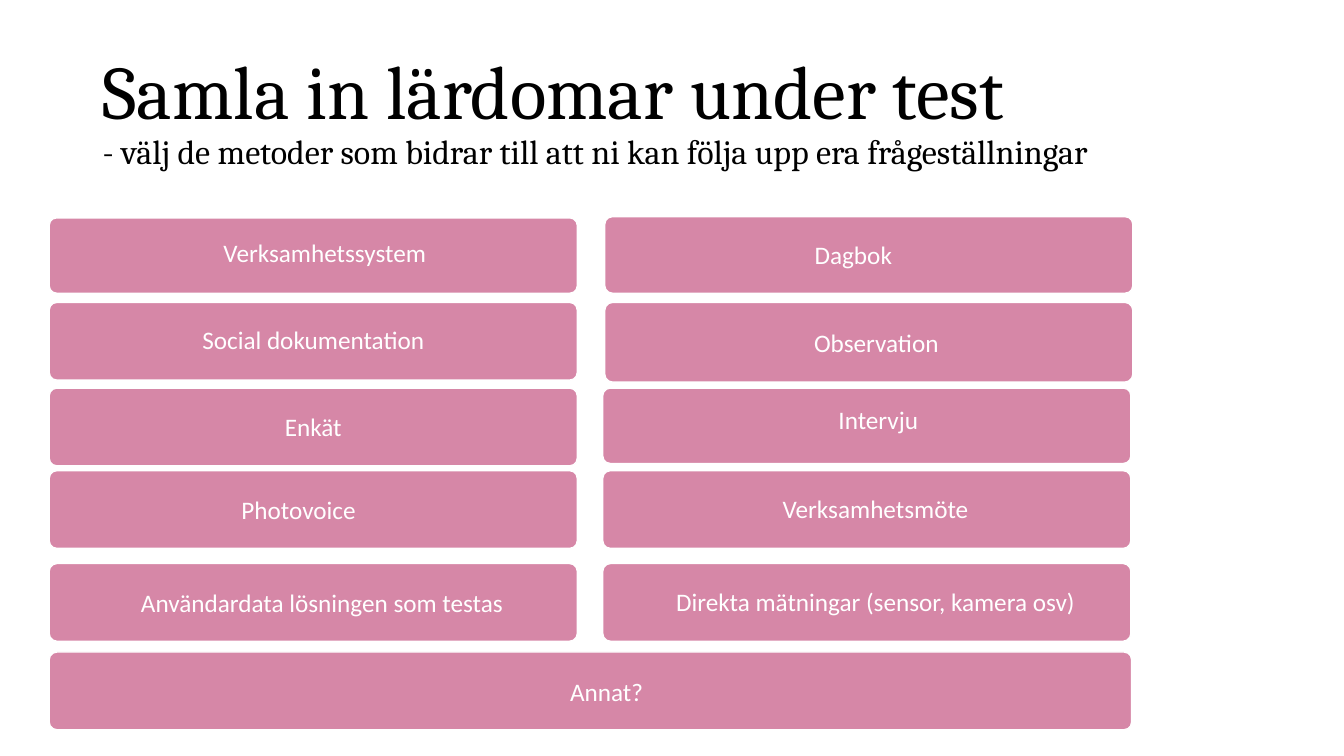
import pptx
import pptx.util
import pptx.dml.color
import pptx.enum.shapes
import pptx.enum.text

Cm, Pt = pptx.util.Cm, pptx.util.Pt
RGB = pptx.dml.color.RGBColor
ALIGN = pptx.enum.text.PP_ALIGN
MIDDLE = pptx.enum.text.MSO_ANCHOR.MIDDLE
ROUND = pptx.enum.shapes.MSO_SHAPE.ROUNDED_RECTANGLE

PINK = RGB(0xD6, 0x87, 0xA7)
WHITE = RGB(0xFF, 0xFF, 0xFF)
BLACK = RGB(0, 0, 0)

HEAD = "Samla in lärdomar under test"
LEAD = "- välj de metoder som bidrar till att ni kan följa upp era frågeställningar"

# Centimetres: text, left, top, height, label shift right, label shift down
LEFT, RIGHT, INNER = 1.24, 15.24, 15.19
CARDS = [
    ("Verksamhetssystem", LEFT, 5.49, 1.9, 0.29, -0.04),
    ("Dagbok", RIGHT, 5.46, 1.93, -0.39, 0.03),
    ("Social dokumentation", LEFT, 7.62, 1.96, 0, 0),
    ("Observation", RIGHT, 7.62, 2.01, 0.19, 0.05),
    ("Enkät", LEFT, 9.78, 1.96, 0, 0.03),
    ("Intervju", INNER, 9.78, 1.9, 0.29, -0.1),
    ("Photovoice", LEFT, 11.86, 1.96, -0.37, 0.05),
    ("Verksamhetsmöte", INNER, 11.86, 1.96, 0.22, 0.03),
    ("Användardata lösningen som testas", LEFT, 14.2, 1.96, 0.22, 0.05),
    ("Direkta mätningar (sensor, kamera osv)", INNER, 14.2, 1.96, 0.22, 0.03),
    ("Annat?", LEFT, 16.43, 1.96, 0.41, 0.05),
]
WIDTH, WIDE = 13.31, 27.28
TRIM_X, TRIM_Y = 0.38, 0.1


def write(para, text, font, size, color):
    run = para.add_run()
    run.text = text
    run.font.name = font
    run.font.size = Pt(size)
    run.font.color.rgb = color


def card(slide, text, left, top, height, right, down):
    width = WIDE if text == CARDS[-1][0] else WIDTH
    box = slide.shapes.add_shape(ROUND, Cm(left), Cm(top), Cm(width), Cm(height))
    box.adjustments[0] = 0.1
    box.shadow.inherit = False
    box.fill.solid()
    box.fill.fore_color.rgb = PINK
    box.line.color.rgb = WHITE
    box.line.width = Pt(1)

    label = slide.shapes.add_textbox(
        Cm(left + TRIM_X / 2 + right), Cm(top + TRIM_Y / 2 + down),
        Cm(width - TRIM_X), Cm(height - TRIM_Y))
    frame = label.text_frame
    frame.word_wrap = True
    frame.vertical_anchor = MIDDLE
    frame.margin_left = frame.margin_right = Cm(0.03)
    frame.margin_top = frame.margin_bottom = Cm(0.03)
    para = frame.paragraphs[0]
    para.alignment = ALIGN.CENTER
    para.line_spacing = 0.9
    write(para, text, "Calibri", 18, WHITE)


def main():
    deck = pptx.Presentation()
    deck.slide_width, deck.slide_height = Cm(33.87), Cm(19.05)
    slide = deck.slides.add_slide(deck.slide_layouts[5])

    title = slide.shapes.title
    title.left, title.top = Cm(2.33), Cm(1.01)
    title.width, title.height = Cm(29.21), Cm(3.68)
    frame = title.text_frame
    frame.word_wrap = True
    frame.auto_size = pptx.enum.text.MSO_AUTO_SIZE.NONE
    frame.vertical_anchor = MIDDLE
    para = frame.paragraphs[0]
    para.alignment = ALIGN.LEFT
    para.line_spacing = 0.9
    write(para, HEAD, "Cambria", 54, BLACK)
    para.add_line_break()
    write(para, LEAD, "Cambria", 24.3, BLACK)

    for item in CARDS:
        card(slide, *item)
    deck.save("out.pptx")


if __name__ == "__main__":
    main()
